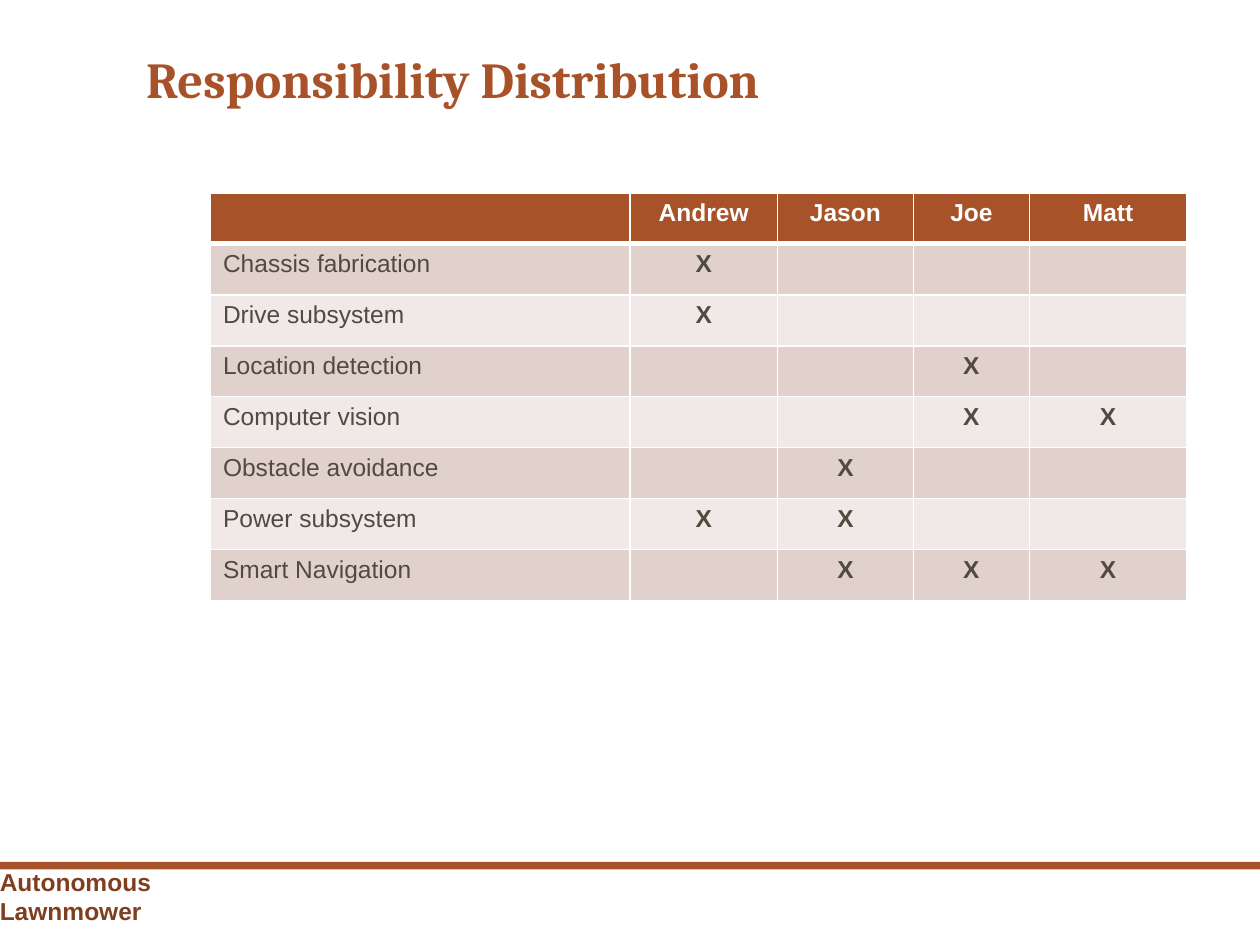
from lxml import etree
from pptx import Presentation
from pptx.dml.color import RGBColor
from pptx.enum.shapes import MSO_SHAPE
from pptx.enum.text import MSO_ANCHOR, MSO_AUTO_SIZE, PP_ALIGN
from pptx.oxml.ns import qn
from pptx.util import Inches, Pt

RECT = MSO_SHAPE.RECTANGLE
BOTTOM = MSO_ANCHOR.BOTTOM
NO_FIT = MSO_AUTO_SIZE.NONE
LEFT, CENTER = PP_ALIGN.LEFT, PP_ALIGN.CENTER
TITLE_ONLY = 5

PEOPLE = ["Andrew", "Jason", "Joe", "Matt"]
TASKS = {
    "Chassis fabrication": ["Andrew"],
    "Drive subsystem": ["Andrew"],
    "Location detection": ["Joe"],
    "Computer vision": ["Joe", "Matt"],
    "Obstacle avoidance": ["Jason"],
    "Power subsystem": ["Andrew", "Jason"],
    "Smart Navigation": ["Jason", "Joe", "Matt"],
}


def rgb(value):
    return RGBColor.from_string(value)


class Deck:
    ACCENT, DARK, TEXT, WHITE = "A85229", "7F3F1F", "514A40", "FFFFFF"
    BANDS = ["E1D1CD", "F1E9E8"]
    HEADING, BODY = "Cambria", "Arial"

    def __init__(self, prs):
        self.s = prs.slides.add_slide(prs.slide_layouts[TITLE_ONLY])

    def style(self, p, size, color, bold=True, name=BODY, align=LEFT):
        p.alignment = align
        p.font.name, p.font.size, p.font.bold = name, Pt(size), bold
        p.font.color.rgb = rgb(color)

    def title(self, text, *box):
        sp = self.s.shapes.title
        sp.left, sp.top, sp.width, sp.height = map(Inches, box)
        tf = sp.text_frame
        tf.text = text
        tf.auto_size, tf.vertical_anchor = NO_FIT, BOTTOM
        p = tf.paragraphs[0]
        p.line_spacing = 0.9
        self.style(p, 28.8, self.ACCENT, name=self.HEADING)

    def bar(self, *box):
        sp = self.s.shapes.add_shape(RECT, *map(Inches, box))
        sp.shadow.inherit = False
        sp.fill.solid()
        sp.fill.fore_color.rgb = rgb(self.ACCENT)
        sp.line.fill.background()

    def footer(self, text, *box):
        tf = self.s.shapes.add_textbox(*map(Inches, box)).text_frame
        tf.word_wrap = True
        tf.margin_right = Inches(1)  # keeps one word to a line
        tf.text = text
        self.style(tf.paragraphs[0], 14, self.DARK)

    def borders(self, cell, top, bottom):
        tc_pr = cell._tc.get_or_add_tcPr()
        for side, width in (("L", 1), ("R", 1), ("T", top), ("B", bottom)):
            ln = etree.SubElement(tc_pr, qn("a:ln" + side), w=str(Pt(width)))
            fill = etree.SubElement(ln, qn("a:solidFill"))
            etree.SubElement(fill, qn("a:srgbClr"), val=self.WHITE)

    def table(self, rows, widths, left, top, height):
        frame = self.s.shapes.add_table(
            len(rows), len(widths), Inches(left), Inches(top),
            Inches(sum(widths)), Inches(height))
        table = frame.table
        for column, width in zip(table.columns, widths):
            column.width = Inches(width)
        for i, row in enumerate(rows):
            header = i == 0
            fill = self.ACCENT if header else self.BANDS[(i - 1) % 2]
            color = self.WHITE if header else self.TEXT
            for j, text in enumerate(row):
                cell = table.cell(i, j)
                self.borders(cell, 3 if i == 1 else 1, 3 if header else 1)
                cell.fill.solid()
                cell.fill.fore_color.rgb = rgb(fill)
                cell.text = text
                self.style(cell.text_frame.paragraphs[0], 14, color,
                           bold=header or j > 0, align=CENTER if j else LEFT)


def main():
    prs = Presentation()
    prs.slide_width, prs.slide_height = Inches(10), Inches(7.5)
    deck = Deck(prs)

    # Footer band
    deck.bar(0, 6.84, 10, 0.06)
    deck.footer("Autonomous Lawnmower", -0.1, 6.83, 2.57, 0.33)

    # Title
    deck.title("Responsibility Distribution", 1.06, 0.42, 8.27, 0.5)

    # Who does what
    rows = [[""] + PEOPLE]
    for task, owners in TASKS.items():
        rows.append([task] + ["X" if name in owners else "" for name in PEOPLE])
    deck.table(rows, [3.33, 1.17, 1.08, 0.92, 1.25], 1.67, 1.53, 3.24)

    prs.save("out.pptx")


if __name__ == "__main__":
    main()
